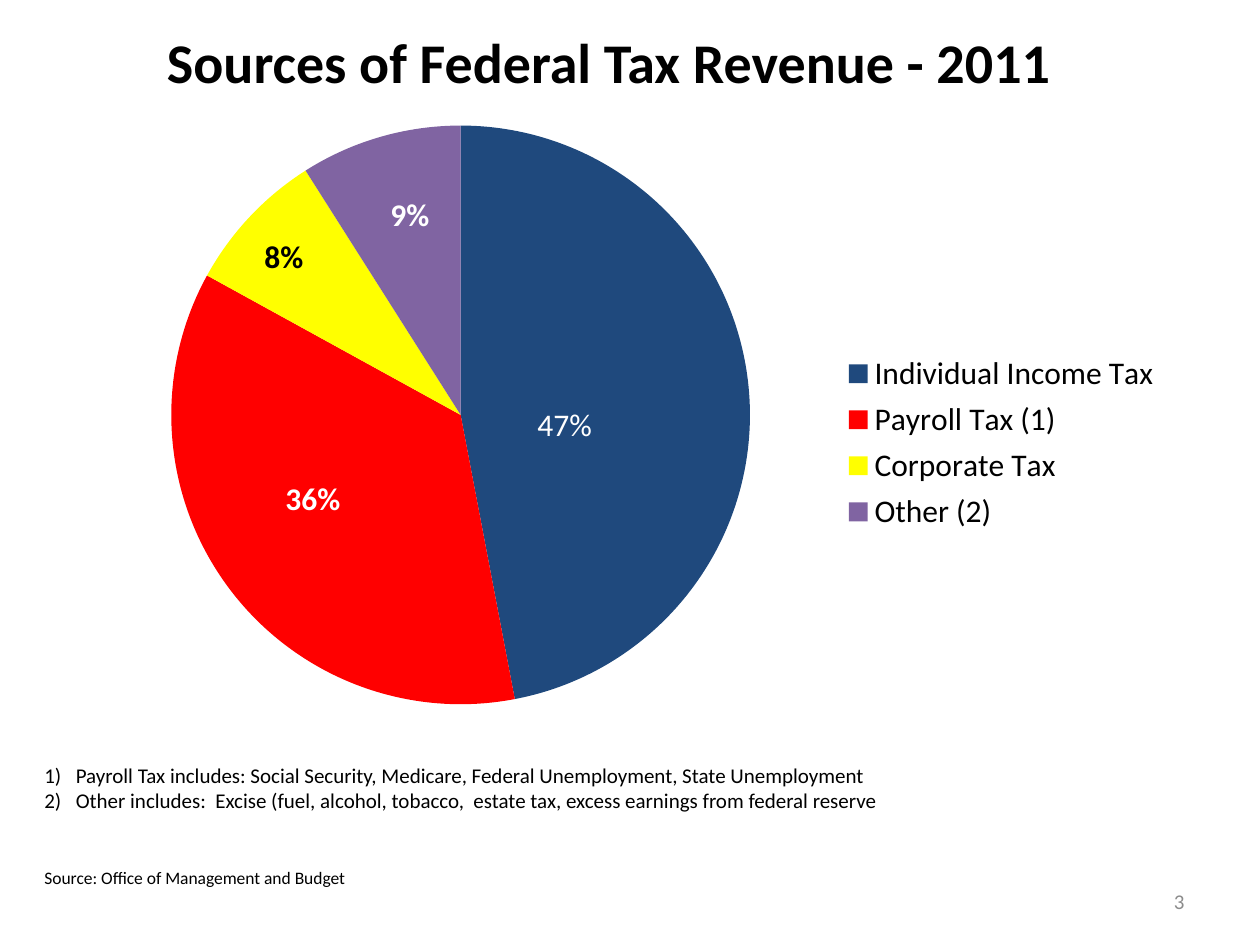
import lxml.etree
import pptx
import pptx.chart.data
import pptx.dml.color
import pptx.enum.chart
import pptx.enum.text
import pptx.oxml.ns
import pptx.util

PX = 914400 // 126
FONT = "Calibri"
ALIGN = pptx.enum.text.PP_ALIGN
ANCHOR = pptx.enum.text.MSO_ANCHOR

SHARES = [
    ("Individual Income Tax", 47, "1F497D"),
    ("Payroll Tax (1)", 36, "FF0000"),
    ("Corporate Tax", 8, "FFFF00"),
    ("Other (2)", 9, "8064A2"),
]
# text, left, top, width, height, colour, bold
SHARE_LABELS = [
    ("47%", 525, 399, 81, 50, "FFFFFF", False),
    ("36%", 273, 473, 81, 50, "FFFFFF", True),
    ("8%", 252, 231, 84, 50, "000000", True),
    ("9%", 378, 189, 64, 50, "FFFFFF", True),
]
NOTES = [
    "Payroll Tax includes: Social Security, Medicare, Federal Unemployment, State Unemployment",
    "Other includes:  Excise (fuel, alcohol, tobacco,  estate tax, excess earnings from federal reserve",
]


def px(length):
    return pptx.util.Emu(length * PX)


def colour(code):
    return pptx.dml.color.RGBColor.from_string(code)


def style_font(font, size, code="000000", bold=False):
    font.name = FONT
    font.size = pptx.util.Pt(size)
    font.bold = bold
    font.color.rgb = colour(code)


def add_span(para, text, size, code="000000", bold=False):
    span = para.add_run()
    span.text = text
    style_font(span.font, size, code, bold)


def add_title(page, text):
    title = page.shapes.title
    title.left, title.top, title.width, title.height = px(0), px(21), px(1218), px(81)
    title.text_frame.vertical_anchor = ANCHOR.TOP
    para = title.text_frame.paragraphs[0]
    para.alignment = ALIGN.CENTER
    add_span(para, text, 32, bold=True)


def add_box(page, left, top, width, height, wrap=True):
    box = page.shapes.add_textbox(px(left), px(top), px(width), px(height))
    box.text_frame.word_wrap = wrap
    return box.text_frame


def add_label(page, text, left, top, width, height, size, code="000000", bold=False):
    frame = add_box(page, left, top, width, height, wrap=False)
    add_span(frame.paragraphs[0], text, size, code, bold)
    return frame


def number_paragraph(para, indent):
    """Give the paragraph a hanging "1)" style number."""
    properties = para._p.get_or_add_pPr()
    properties.set("marL", str(indent))
    properties.set("indent", str(-indent))
    number = lxml.etree.SubElement(properties, pptx.oxml.ns.qn("a:buAutoNum"))
    number.set("type", "arabicParenR")


def add_notes(page, notes):
    frame = add_box(page, 32, 756, 1197, 63)
    for index, note in enumerate(notes):
        para = frame.add_paragraph() if index else frame.paragraphs[0]
        number_paragraph(para, pptx.util.Inches(0.25))
        add_span(para, note, 12)


def make_layout(x, y, width, height, inner=False):
    """Return a manual chart layout given in fractions of the chart area."""
    layout = lxml.etree.Element(pptx.oxml.ns.qn("c:layout"))
    manual = lxml.etree.SubElement(layout, pptx.oxml.ns.qn("c:manualLayout"))
    settings = [("layoutTarget", "inner")] if inner else []
    settings += [("xMode", "edge"), ("yMode", "edge"),
                 ("x", x), ("y", y), ("w", width), ("h", height)]
    for name, value in settings:
        lxml.etree.SubElement(manual, pptx.oxml.ns.qn("c:" + name)).set("val", str(value))
    return layout


def drop_layout(element):
    for layout in element.findall(pptx.oxml.ns.qn("c:layout")):
        element.remove(layout)


def add_pie(page):
    data = pptx.chart.data.CategoryChartData()
    data.categories = [name for name, _, _ in SHARES]
    data.add_series("Series 1", [value for _, value, _ in SHARES])
    chart = page.shapes.add_chart(
        pptx.enum.chart.XL_CHART_TYPE.PIE, px(84), px(105), px(1092), px(620), data).chart
    chart.has_title = False
    style_font(chart.font, 18)

    plot = chart.plots[0]
    plot.vary_by_categories = True
    for index, (_, _, code) in enumerate(SHARES):
        fill = plot.series[0].points[index].format.fill
        fill.solid()
        fill.fore_color.rgb = colour(code)

    chart.has_legend = True
    legend = chart.legend
    legend.position = pptx.enum.chart.XL_LEGEND_POSITION.RIGHT
    legend.include_in_layout = False
    style_font(legend.font, 18)

    area = chart._chartSpace.chart.plotArea
    drop_layout(area)
    area.insert(0, make_layout(0.08, 0.03, 0.53, 0.94, inner=True))
    drop_layout(legend._element)
    position = legend._element.find(pptx.oxml.ns.qn("c:legendPos"))
    position.addnext(make_layout(0.69, 0.39, 0.3, 0.31))


def add_page_number(page, text):
    frame = add_label(page, text, 903, 876, 294, 50, 12, "8C8C8C")
    frame.word_wrap = True
    frame.vertical_anchor = ANCHOR.MIDDLE
    frame.paragraphs[0].alignment = ALIGN.RIGHT


def main():
    deck = pptx.Presentation()
    deck.slide_width, deck.slide_height = px(1260), px(945)
    page = deck.slides.add_slide(deck.slide_layouts[5])
    add_title(page, "Sources of Federal Tax Revenue - 2011")
    add_pie(page)
    for text, left, top, width, height, code, bold in SHARE_LABELS:
        add_label(page, text, left, top, width, height, 18, code, bold)
    add_notes(page, NOTES)
    add_label(page, "Source: Office of Management and Budget", 32, 861, 335, 34, 10)
    add_page_number(page, "3")
    deck.save("out.pptx")


if __name__ == "__main__":
    main()
